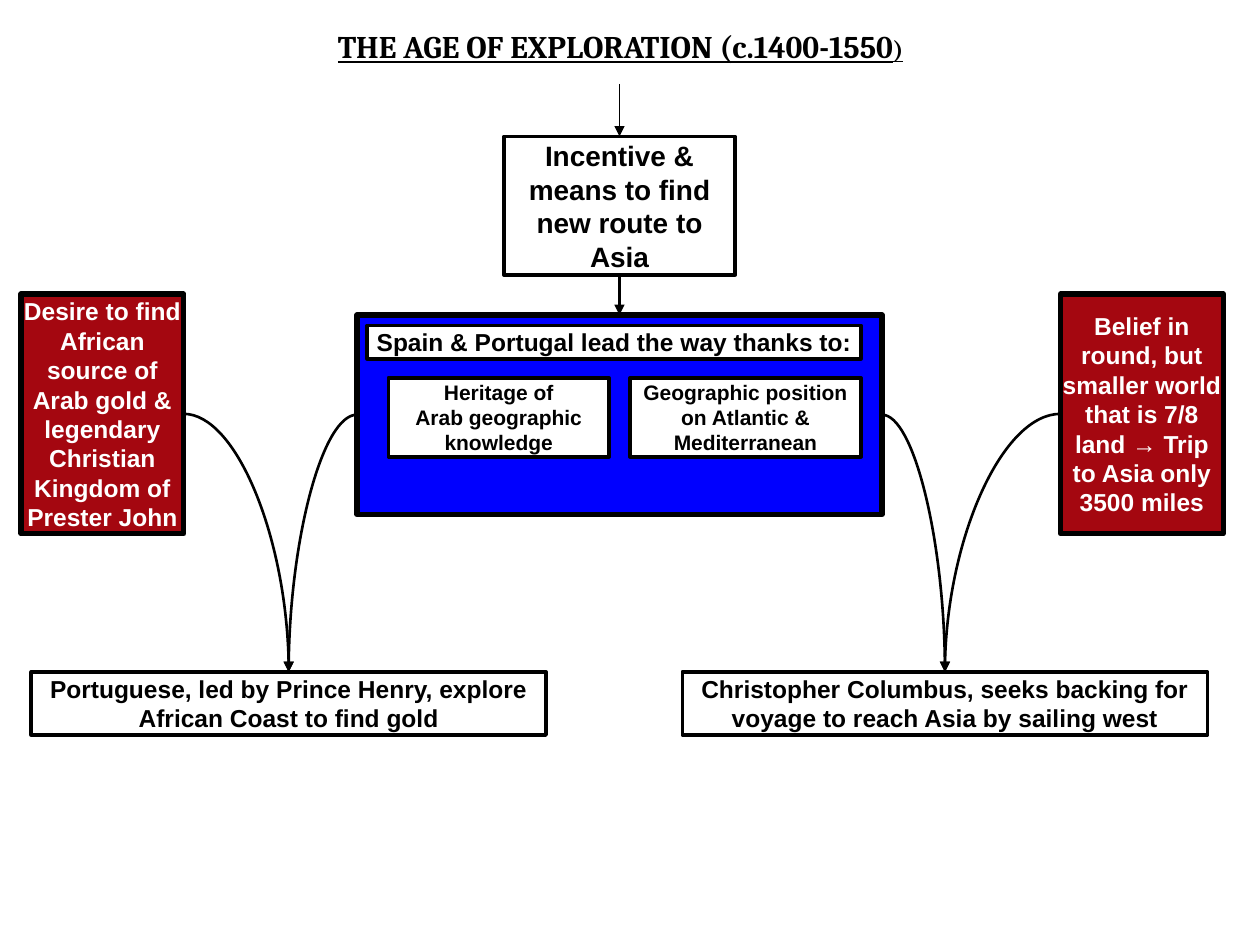
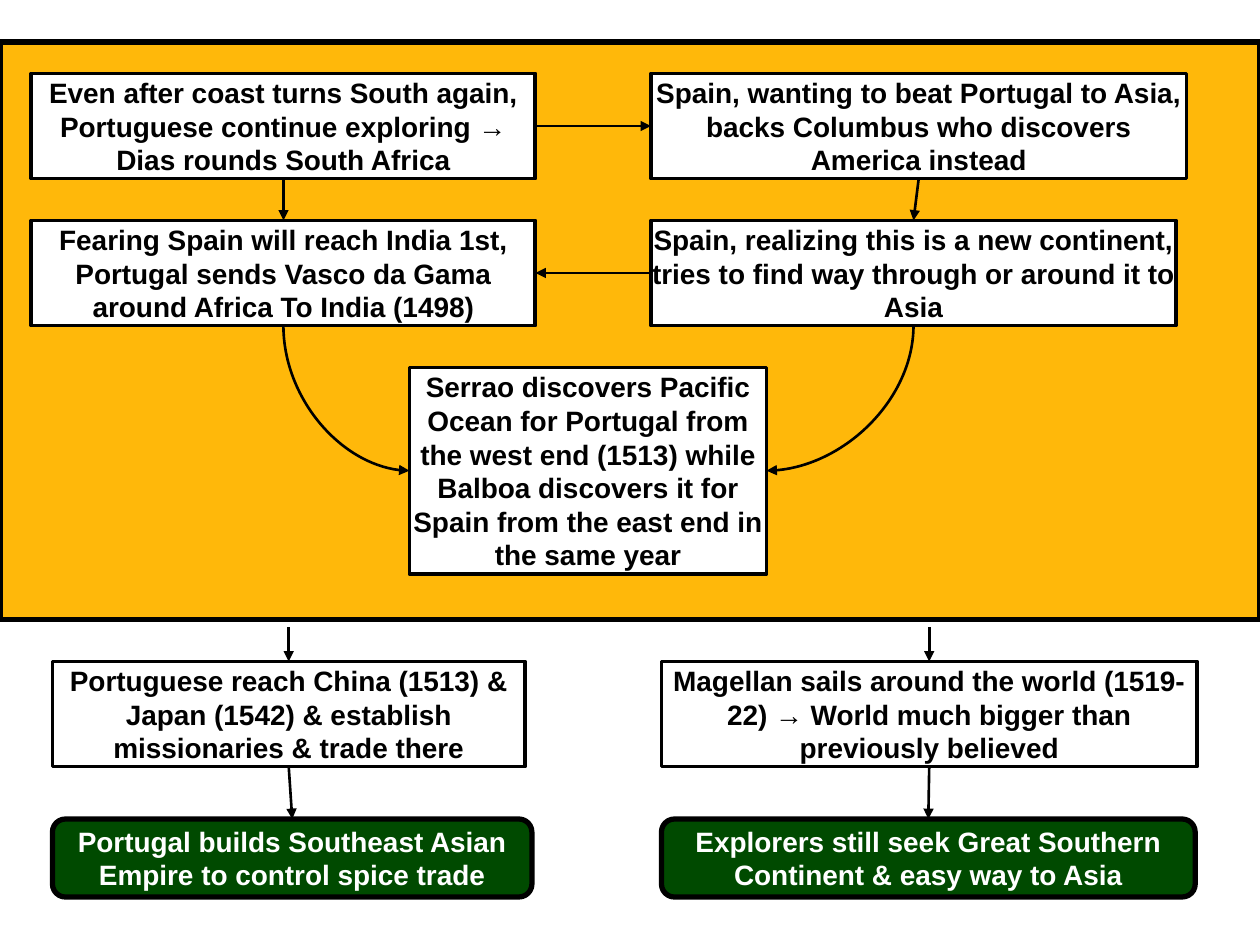
from dataclasses import dataclass

from pptx import Presentation
from pptx.dml.color import RGBColor
from pptx.enum.shapes import MSO_CONNECTOR, MSO_SHAPE
from pptx.enum.text import MSO_ANCHOR, MSO_AUTO_SIZE, PP_ALIGN
from pptx.oxml import parse_xml
from pptx.oxml.ns import nsdecls, qn
from pptx.util import Pt

STRAIGHT, CURVE = MSO_CONNECTOR.STRAIGHT, MSO_CONNECTOR.CURVE
PLAIN = MSO_SHAPE.FLOWCHART_PROCESS
ROUND = MSO_SHAPE.FLOWCHART_ALTERNATE_PROCESS
RECT = MSO_SHAPE.RECTANGLE
LEFT, CENTER = PP_ALIGN.LEFT, PP_ALIGN.CENTER
UPPER, MIDDLE = MSO_ANCHOR.TOP, MSO_ANCHOR.MIDDLE
FIXED = MSO_AUTO_SIZE.NONE
TOP, WEST, BOTTOM, EAST = range(4)


@dataclass(frozen=True)
class Theme:
    black: str = "000000"
    white: str = "FFFFFF"
    blue: str = "0000FF"
    red: str = "A40710"
    gold: str = "FFB80A"
    green: str = "004A00"
    body: str = "Arial"
    head: str = "Cambria"
    title: float = 18
    large: float = 16
    mid: float = 14
    small: float = 12
    thick: float = 3
    edge: float = 2.25
    arrow: float = 1.5
    thin: float = 0.75


LOOK = Theme()


def color(code):
    return RGBColor.from_string(code)


def write(para, text, *, size, font=LOOK.body, ink=LOOK.black, under=False, bold=True, align=CENTER):
    para.alignment = align
    run = para.add_run()
    run.text = text
    run.font.name = font
    run.font.size = Pt(size)
    run.font.bold = bold
    run.font.underline = under
    run.font.color.rgb = color(ink)


def place(shape, area):
    shape.left, shape.top, shape.width, shape.height = map(Pt, area)


def add_title(slide, parts, area):
    title = slide.shapes.title
    place(title, area)
    frame = title.text_frame
    frame.word_wrap = False
    frame.auto_size = FIXED
    frame.vertical_anchor = UPPER
    for text, size in parts:
        write(frame.paragraphs[0], text, size=size, font=LOOK.head, under=True, align=LEFT)


def add_box(slide, area, lines=(), *, size=LOOK.large, fill=LOOK.white, ink=LOOK.black,
            edge=LOOK.edge, form=PLAIN):
    box = slide.shapes.add_shape(form, *map(Pt, area))
    box.shadow.inherit = False
    box.fill.solid()
    box.fill.fore_color.rgb = color(fill)
    box.line.color.rgb = color(LOOK.black)
    box.line.width = Pt(edge)
    frame = box.text_frame
    frame.word_wrap = True
    frame.auto_size = FIXED
    frame.vertical_anchor = MIDDLE
    frame.margin_left = frame.margin_right = frame.margin_top = frame.margin_bottom = 0
    for index, line in enumerate(lines):
        para = frame.add_paragraph() if index else frame.paragraphs[0]
        write(para, line, size=size, ink=ink)
    return box


def add_link(slide, goal, side, *, source=None, exit=BOTTOM, spot=(0, 0), kind=STRAIGHT,
             width=LOOK.arrow, tip="tailEnd"):
    x, y = map(Pt, spot)
    link = slide.shapes.add_connector(kind, x, y, x, y)
    if source is not None:
        link.begin_connect(source, exit)
    link.end_connect(goal, side)
    link.line.color.rgb = color(LOOK.black)
    link.line.width = Pt(width)
    props = link._element.spPr
    props.find(qn("a:ln")).append(parse_xml(f'<a:{tip} {nsdecls("a")} type="triangle"/>'))
    props.append(parse_xml(f'<a:effectLst {nsdecls("a")}/>'))
    if kind == CURVE:
        props.find(qn("a:prstGeom")).set("prst", "curvedConnector2")


def draw_motives(deck):
    slide = deck.slides.add_slide(deck.slide_layouts[5])
    add_title(slide, [("THE AGE OF EXPLORATION (c.1400-1550", LOOK.title), (")", LOOK.mid)],
              (185.8, 12, 369.4, 28.8))

    lead = add_box(slide, (204, 180, 300, 114), fill=LOOK.blue, edge=LOOK.thick)
    add_box(slide, (210, 186, 282, 19), ["Spain & Portugal lead the way thanks to:"], size=LOOK.mid)
    add_box(slide, (222, 216, 126, 45), ["Heritage of", "Arab geographic knowledge"],
            size=LOOK.small)
    add_box(slide, (360, 216, 132, 45), ["Geographic position", "on Atlantic & Mediterranean"],
            size=LOOK.small)
    goal = add_box(slide, (288, 78, 132, 79), ["Incentive & means to find new route to Asia"])

    desire, belief = [
        add_box(slide, (x, 168, 93, 137), [text], size=LOOK.mid, fill=LOOK.red,
                ink=LOOK.white, edge=LOOK.thick)
        for x, text in (
            (12, "Desire to find African source of Arab gold & legendary Christian Kingdom "
                 "of Prester John"),
            (606, "Belief in round, but smaller world that is 7/8 land → Trip to Asia only "
                  "3500 miles"),
        )
    ]
    henry, voyage = [
        add_box(slide, (x, 384, width, 36), [text], size=LOOK.mid)
        for x, width, text in (
            (18, 294, "Portuguese, led by Prince Henry, explore African Coast to find gold"),
            (390, 300, "Christopher Columbus, seeks backing for voyage to reach Asia by "
                       "sailing west"),
        )
    ]

    add_link(slide, goal, TOP, spot=(354, 48), width=LOOK.thin)
    add_link(slide, lead, TOP, source=goal)
    for source, exit, target in ((belief, WEST, voyage), (lead, EAST, voyage),
                                 (lead, WEST, henry), (desire, EAST, henry)):
        add_link(slide, target, TOP, source=source, exit=exit, kind=CURVE)


def draw_routes(deck):
    slide = deck.slides.add_slide(deck.slide_layouts[6])
    add_box(slide, (0, 24, 720, 330), fill=LOOK.gold, edge=LOOK.thick, form=RECT)

    dias, spain, gama, search, china, globe = [
        add_box(slide, (x, y, width, 60), [text])
        for x, y, width, text in (
            (18, 42, 288, "Even after coast turns South again, Portuguese continue exploring "
                          "→ Dias rounds South Africa"),
            (372, 42, 306, "Spain, wanting to beat Portugal to Asia, backs Columbus who "
                           "discovers America instead"),
            (18, 126, 288, "Fearing Spain will reach India 1st, Portugal sends Vasco da Gama "
                           "around Africa To India (1498)"),
            (372, 126, 300, "Spain, realizing this is a new continent, tries to find way "
                            "through or around it to Asia"),
            (30, 378, 270, "Portuguese reach China (1513) & Japan (1542) & establish "
                           "missionaries & trade there"),
            (378, 378, 306, "Magellan sails around the world (1519-22) → World much bigger "
                            "than previously believed"),
        )
    ]
    ocean = add_box(slide, (234, 210, 204, 118), [
        "Serrao discovers Pacific Ocean for Portugal from the west end (1513) while Balboa "
        "discovers it for Spain from the east end in the same year"])
    empire, quest = [
        add_box(slide, (x, 468, width, 44.6), [text], fill=LOOK.green, ink=LOOK.white,
                edge=LOOK.thick, form=ROUND)
        for x, width, text in (
            (30, 274, "Portugal builds Southeast Asian Empire to control spice trade"),
            (378, 305, "Explorers still seek Great Southern Continent & easy way to Asia"),
        )
    ]

    add_link(slide, spain, WEST, source=dias, exit=EAST)
    add_link(slide, gama, EAST, source=search, exit=WEST)
    for source, target in ((dias, gama), (spain, search), (china, empire), (globe, quest)):
        add_link(slide, target, TOP, source=source)
    for target, x in ((china, 165), (globe, 531)):
        add_link(slide, target, TOP, spot=(x, 358.5))
    for target, exit in ((gama, WEST), (search, EAST)):
        add_link(slide, target, BOTTOM, source=ocean, exit=exit, kind=CURVE, tip="headEnd")


def main():
    deck = Presentation()
    deck.slide_width, deck.slide_height = Pt(720), Pt(540)
    draw_motives(deck)
    draw_routes(deck)
    deck.save("out.pptx")


if __name__ == "__main__":
    main()
